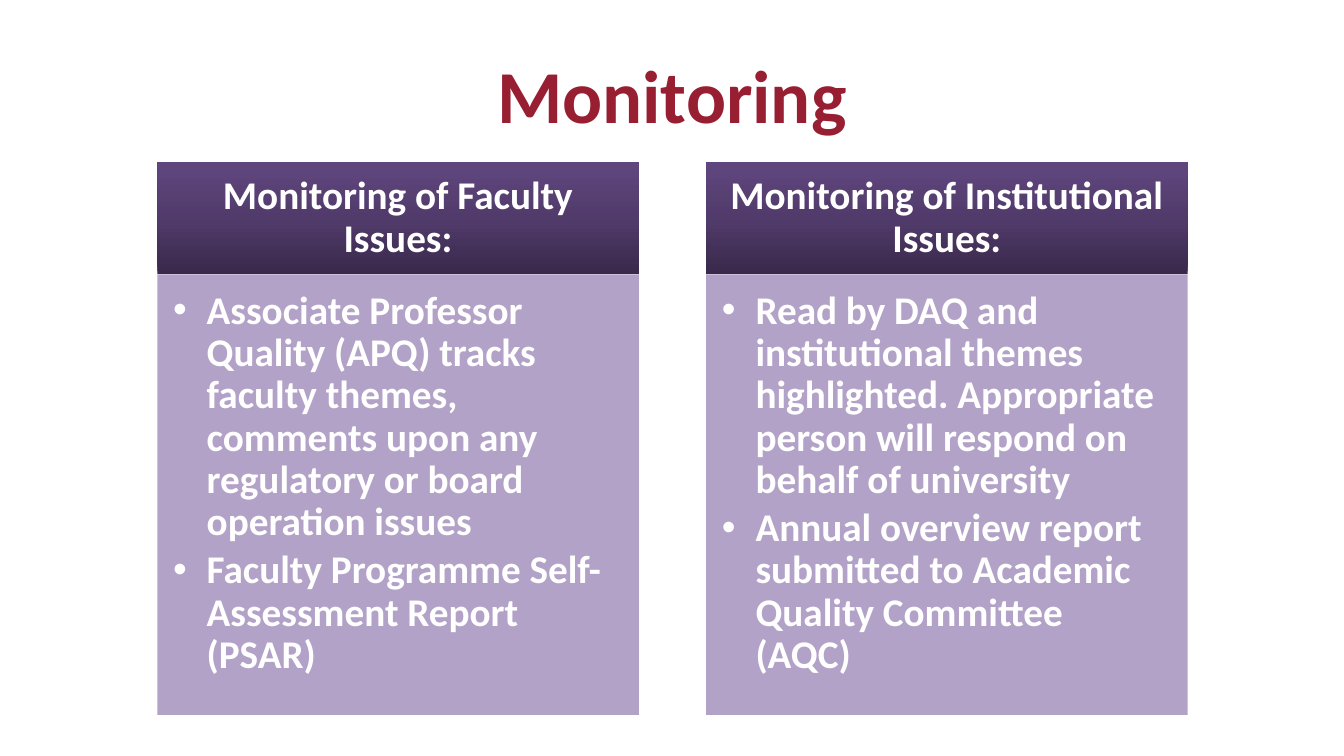
from copy import deepcopy

from lxml import etree
from pptx import Presentation
from pptx.dml.color import RGBColor
from pptx.enum.text import MSO_ANCHOR, MSO_AUTO_SIZE, PP_ALIGN
from pptx.oxml.ns import qn
from pptx.util import Pt

CENTER = PP_ALIGN.CENTER
LEFT = PP_ALIGN.LEFT
TOP = MSO_ANCHOR.TOP
MIDDLE = MSO_ANCHOR.MIDDLE
NO_AUTOFIT = MSO_AUTO_SIZE.NONE

CRIMSON = RGBColor(0x98, 0x1E, 0x32)
WHITE = RGBColor(0xFF, 0xFF, 0xFF)
LILAC = RGBColor(0xB3, 0xA2, 0xC7)
HEADING_SHADES = [
    (0, RGBColor(0x39, 0x29, 0x4B)),
    (0.5, RGBColor(0x51, 0x3B, 0x6B)),
    (1, RGBColor(0x60, 0x46, 0x7E)),
]

FONT = "Calibri"
COMPARISON_LAYOUT = 4
COLUMN_LEFT = 84.25
COLUMN_STEP = 294
COLUMN_WIDTH = 258
HEADING_TOP = 87
HEADING_HEIGHT = 60
LIST_HEIGHT = 236

COLUMNS = [
    (
        "Monitoring of Faculty Issues:",
        [
            "Associate Professor Quality (APQ) tracks faculty themes, "
            "comments upon any regulatory or board operation issues",
            "Faculty Programme Self-Assessment Report (PSAR)",
        ],
    ),
    (
        "Monitoring of Institutional Issues:",
        [
            "Read by DAQ and institutional themes highlighted. "
            "Appropriate person will respond on behalf of university",
            "Annual overview report submitted to Academic Quality Committee (AQC)",
        ],
    ),
]


def place(shape, left, top, width, height):
    shape.left, shape.top = Pt(left), Pt(top)
    shape.width, shape.height = Pt(width), Pt(height)


def set_frame(shape, anchor, insets):
    frame = shape.text_frame
    frame.word_wrap = True
    frame.auto_size = NO_AUTOFIT
    frame.vertical_anchor = anchor
    frame.margin_left, frame.margin_top, frame.margin_right, frame.margin_bottom = map(Pt, insets)
    return frame


def add_run(paragraph, text, size, color):
    run = paragraph.add_run()
    run.text = text
    run.font.name = FONT
    run.font.size = Pt(size)
    run.font.bold = True
    run.font.color.rgb = color


def set_spacing(paragraph, alignment, line_spacing, space_after):
    paragraph.alignment = alignment
    paragraph.line_spacing = line_spacing
    paragraph.space_before = Pt(0)
    paragraph.space_after = Pt(space_after)


def add_bullet(paragraph, indent):
    properties = paragraph._p.get_or_add_pPr()
    properties.set("marL", str(Pt(indent)))
    properties.set("indent", str(Pt(-indent)))
    etree.SubElement(properties, qn("a:buChar")).set("char", "•")


def fill_gradient(shape, shades):
    shape.fill.gradient()
    shape.fill.gradient_angle = 90
    stop_list = shape._element.spPr.find(qn("a:gradFill")).find(qn("a:gsLst"))
    stop_list.append(deepcopy(stop_list[0]))
    for stop, (position, color) in zip(shape.fill.gradient_stops, shades):
        stop.position = position
        stop.color.rgb = color


def write_title(shape, text):
    place(shape, 36, 16.5, 648, 67.5)
    frame = set_frame(shape, MIDDLE, (7.2, 3.6, 7.2, 3.6))
    paragraph = frame.paragraphs[0]
    paragraph.alignment = CENTER
    add_run(paragraph, text, 40, CRIMSON)


def write_heading(shape, left, text):
    place(shape, left, HEADING_TOP, COLUMN_WIDTH, HEADING_HEIGHT)
    fill_gradient(shape, HEADING_SHADES)
    frame = set_frame(shape, MIDDLE, (11.5, 6.5, 11.5, 6.5))
    paragraph = frame.paragraphs[0]
    set_spacing(paragraph, CENTER, 0.9, 0)
    add_run(paragraph, text, 21, WHITE)


def write_list(shape, left, items):
    place(shape, left, HEADING_TOP + HEADING_HEIGHT, COLUMN_WIDTH, LIST_HEIGHT)
    shape.fill.solid()
    shape.fill.fore_color.rgb = LILAC
    frame = set_frame(shape, TOP, (8.5, 8.5, 11.5, 13))
    for index, item in enumerate(items):
        paragraph = frame.add_paragraph() if index else frame.paragraphs[0]
        add_bullet(paragraph, 18)
        set_spacing(paragraph, LEFT, 0.9, 3.15)
        add_run(paragraph, item, 21, WHITE)


def main():
    presentation = Presentation()
    presentation.slide_width = Pt(720)
    presentation.slide_height = Pt(405)
    slide = presentation.slides.add_slide(presentation.slide_layouts[COMPARISON_LAYOUT])
    title, *column_shapes = slide.placeholders
    write_title(title, "Monitoring")
    for index, (heading, items) in enumerate(COLUMNS):
        left = COLUMN_LEFT + index * COLUMN_STEP
        heading_shape, list_shape = column_shapes[2 * index:2 * index + 2]
        write_heading(heading_shape, left, heading)
        write_list(list_shape, left, items)
    presentation.save("out.pptx")


if __name__ == "__main__":
    main()
